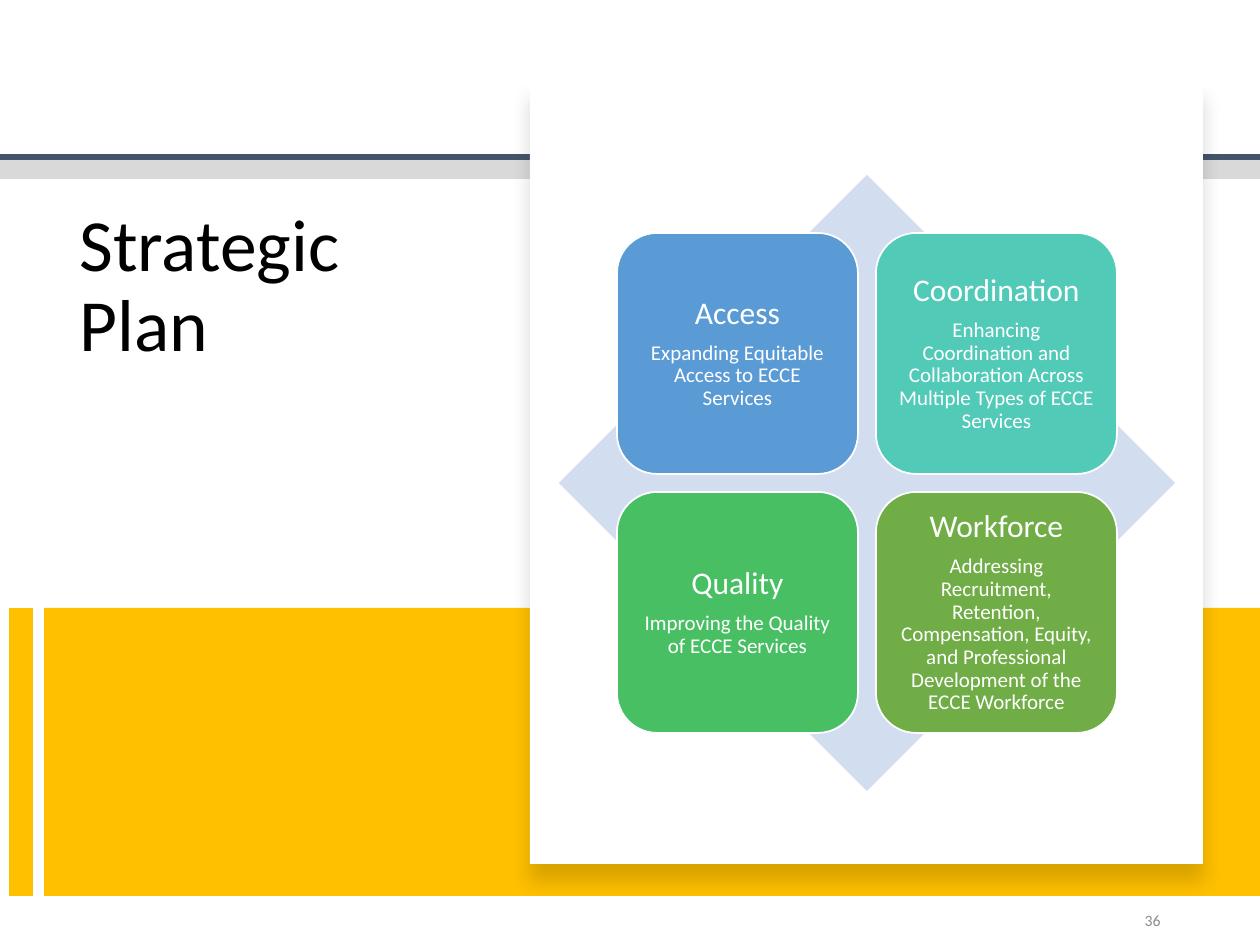
"""Build the Strategic Plan slide with its four-part diamond matrix."""
from dataclasses import dataclass

from lxml.etree import SubElement
from pptx import Presentation
from pptx.dml.color import RGBColor
from pptx.enum.shapes import MSO_CONNECTOR as Connector, MSO_SHAPE as Shape
from pptx.enum.text import MSO_ANCHOR as Anchor, PP_ALIGN as Align
from pptx.oxml import parse_xml
from pptx.oxml.ns import nsdecls, qn
from pptx.util import Pt


@dataclass(frozen=True)
class Theme:
    font: str = "Calibri"
    black: str = "000000"
    white: str = "FFFFFF"
    number: str = "8C8C8C"
    navy: str = "44546A"
    grey: str = "D9D9D9"
    gold: str = "FFC000"
    diamond: str = "D2DEEF"
    access: str = "5B9BD5"
    coordination: str = "52CAB8"
    quality: str = "49BF64"
    workforce: str = "70AD47"
    title_size: int = 42
    heading_size: int = 18
    body_size: int = 12
    number_size: int = 9


theme = Theme()
SCALE = 914400 / 126


def emu(*lengths):
    return [round(length * SCALE) for length in lengths]


def style(paragraph, size, color, align=Align.LEFT, line_spacing=0.9):
    paragraph.alignment = align
    paragraph.line_spacing = line_spacing
    for run in paragraph.runs:
        run.font.name = theme.font
        run.font.size = Pt(size)
        run.font.color.rgb = RGBColor.from_string(color)


presentation = Presentation()
presentation.slide_width, presentation.slide_height = emu(1260, 945)
slide = presentation.slides.add_slide(presentation.slide_layouts[6])
shapes = slide.shapes

for ends, color, width in (
    ((0, 168, 1260, 168), theme.grey, 12.5),
    ((0, 157, 1260, 157), theme.navy, 3),
    ((21, 608, 21, 896), theme.gold, 14),
):
    line = shapes.add_connector(Connector.STRAIGHT, *emu(*ends))
    line.line.color.rgb = RGBColor.from_string(color)
    line.line.width = Pt(width)
    SubElement(line._element.spPr, qn("a:effectLst"))

for kind, box, color in (
    (Shape.RECTANGLE, (44, 608, 1216, 288), theme.gold),
    (Shape.RECTANGLE, (530, 81, 673, 783), theme.white),
    (Shape.DIAMOND, (559, 175, 616, 616), theme.diamond),
):
    shape = shapes.add_shape(kind, *emu(*box))
    shape.shadow.inherit = False
    shape.fill.solid()
    shape.fill.fore_color.rgb = RGBColor.from_string(color)
    shape.line.fill.background()
    if color == theme.white:
        shape._element.spPr.find(qn("a:effectLst")).append(parse_xml(
            f'<a:outerShdw {nsdecls("a")} blurRad="{Pt(11)}" dist="{Pt(10)}" '
            f'dir="5400000" algn="t" rotWithShape="0"><a:srgbClr val="{theme.black}">'
            '<a:alpha val="15000"/></a:srgbClr></a:outerShdw>'
        ))

title = shapes.add_textbox(*emu(67, 202, 392, 370))
title.text_frame.word_wrap = True
title.text_frame.text = "Strategic Plan"
style(title.text_frame.paragraphs[0], theme.title_size, theme.black)

number = shapes.add_textbox(*emu(889, 895, 284, 50))
number.text_frame.word_wrap = True
number.text_frame.vertical_anchor = Anchor.MIDDLE
number.text_frame.text = "36"
style(number.text_frame.paragraphs[0], theme.number_size, theme.number, Align.RIGHT, 1.0)
number.text_frame.paragraphs[0].space_after = Pt(6)

goals = (
    ("Access", "Expanding Equitable Access to ECCE Services", theme.access),
    ("Coordination", "Enhancing Coordination and Collaboration Across Multiple Types "
     "of ECCE Services", theme.coordination),
    ("Quality", "Improving the Quality of ECCE Services", theme.quality),
    ("Workforce", "Addressing Recruitment, Retention, Compensation, Equity, and "
     "Professional Development of the ECCE Workforce", theme.workforce),
)
CARD_LEFT, CARD_TOP, CARD_SIZE, CARD_STEP, CARD_INSET = 617, 233, 241, 259, 9

for index, (heading, body, color) in enumerate(goals):
    row, column = divmod(index, 2)
    card = shapes.add_shape(Shape.ROUNDED_RECTANGLE, *emu(
        CARD_LEFT + column * CARD_STEP, CARD_TOP + row * CARD_STEP, CARD_SIZE, CARD_SIZE))
    card.shadow.inherit = False
    card.fill.solid()
    card.fill.fore_color.rgb = RGBColor.from_string(color)
    card.line.color.rgb = RGBColor.from_string(theme.white)
    card.line.width = Pt(1)
    frame = card.text_frame
    frame.word_wrap = True
    frame.vertical_anchor = Anchor.MIDDLE
    frame.margin_left, frame.margin_top, frame.margin_right, frame.margin_bottom = emu(
        *[CARD_INSET] * 4)
    frame.text = f"{heading}\n{body}"
    for paragraph, size in zip(frame.paragraphs, (theme.heading_size, theme.body_size)):
        style(paragraph, size, theme.white, Align.CENTER)
        paragraph.space_after = Pt(size * 0.35)

presentation.save("out.pptx")
